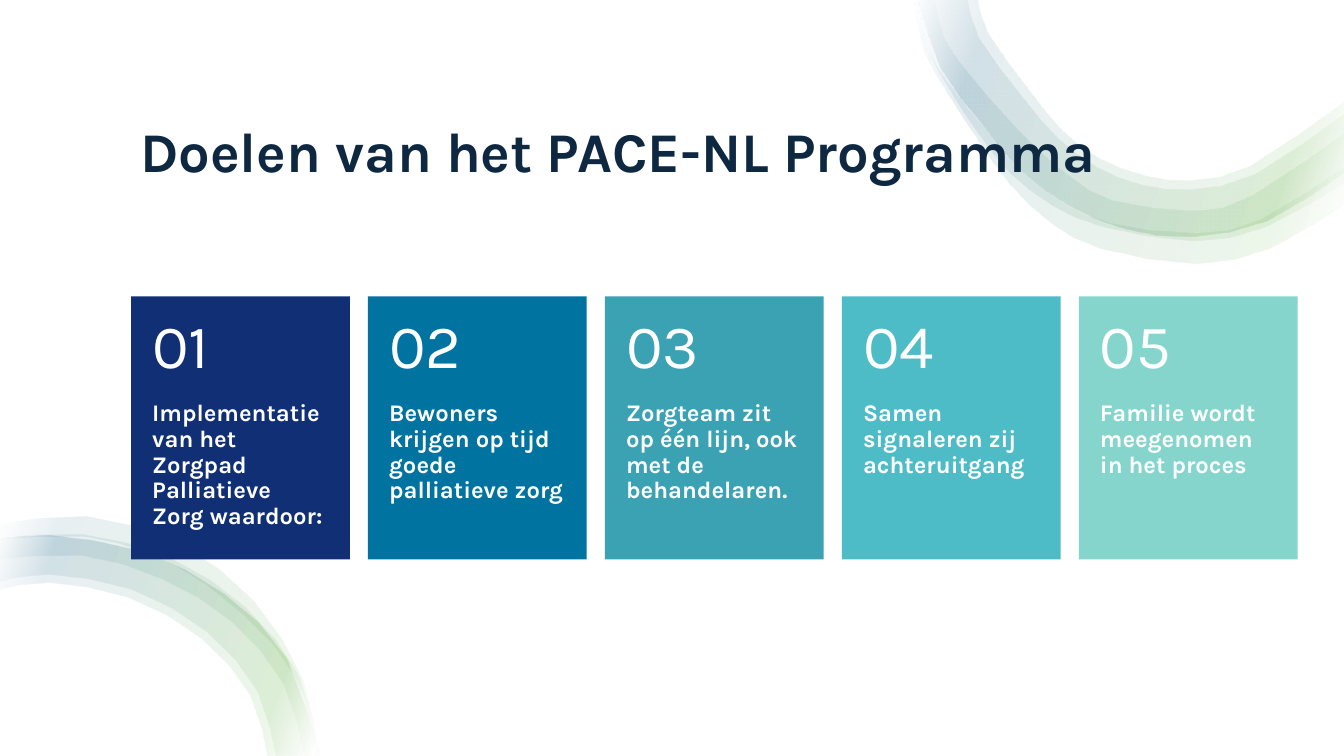
from lxml import etree
from pptx import Presentation
from pptx.dml.color import RGBColor
from pptx.enum.shapes import MSO_SHAPE
from pptx.enum.text import MSO_ANCHOR
from pptx.oxml import parse_xml
from pptx.util import Inches, Pt

RECT = MSO_SHAPE.RECTANGLE
TOP, MID, LOW = MSO_ANCHOR.TOP, MSO_ANCHOR.MIDDLE, MSO_ANCHOR.BOTTOM
NS = "http://schemas.openxmlformats.org/drawingml/2006/main"
WIDE, HIGH = 13.33, 7.5
LEFT, ROW, GAP = 1.3, 2.94, 0.18
CARD_W, CARD_H, HEAD_H = 2.17, 2.61, 1.04
FONT = "Karla"
STEPS = 2

COLORS = {
    "white": "FFFFFF", "ink": "0E2841", "green": "4EA72E", "blue": "156082",
    "navy": "102F75", "ocean": "0073A0", "teal": "3BA2B3",
    "aqua": "4DBCC6", "mint": "85D5CC",
}
FADE = [(2, "white"), (16, "green"), (85, "blue"), (100, "white")]

CARDS = [
    ("navy", "Implementatie van het Zorgpad Palliatieve Zorg waardoor:"),
    ("ocean", "Bewoners krijgen op tijd goede palliatieve zorg"),
    ("teal", "Zorgteam zit op één lijn, ook met de behandelaren."),
    ("aqua", "Samen signaleren zij achteruitgang"),
    ("mint", "Familie wordt meegenomen in het proces"),
]

TOP_RIM = [(9.11, 0), (9.33, 0.68), (9.73, 1.22), (10.13, 1.69),
           (10.6, 2.04), (11.15, 2.27), (11.81, 2.35), (12.57, 2.19),
           (13.33, 1.71)]
LOW_RIM = [(0, 5.36), (0.49, 5.31), (1.41, 5.47), (2.22, 5.89), (2.84, 6.53),
           (3.16, 7.5)]

TOP_BANDS = [
    ([(9.07, 0), (9.16, 0.5), (9.42, 0.96), (9.7, 1.39), (10.01, 1.82),
      (10.41, 2.2), (10.91, 2.46), (11.86, 2.61), (12.61, 2.45),
      (13.33, 2.02)],
     [(9.1, 0), (9.2, 0.49), (9.48, 0.92), (9.81, 1.32), (10.15, 1.7),
      (10.55, 2.01), (11.01, 2.21), (11.85, 2.31), (12.48, 2.18),
      (13.33, 1.65)]),
    ([(9.11, 0), (9.19, 0.46), (9.43, 0.91), (9.7, 1.32), (10.02, 1.72),
      (10.44, 2.04), (10.94, 2.25), (11.84, 2.39), (12.55, 2.25),
      (13.33, 1.81)],
     [(9.27, 0), (9.37, 0.39), (9.64, 0.77), (9.96, 1.14), (10.29, 1.48),
      (10.64, 1.77), (11.04, 1.99), (11.86, 2.09), (12.41, 1.94),
      (13.33, 1.32)]),
    (TOP_RIM,
     [(9.6, 0), (9.71, 0.38), (10.13, 0.95), (10.49, 1.37), (10.88, 1.66),
      (11.31, 1.83), (11.81, 1.88), (12.44, 1.73), (13.33, 1.13)]),
    (TOP_RIM,
     [(9.7, 0), (9.8, 0.33), (10.21, 0.9), (10.54, 1.3), (10.9, 1.57),
      (11.34, 1.74), (11.81, 1.79), (12.39, 1.65), (13.33, 1.01)]),
]
LOW_BANDS = [
    (LOW_RIM,
     [(0, 5.85), (0.49, 5.78), (1.28, 5.93), (1.99, 6.33), (2.48, 6.9),
      (2.65, 7.5)]),
    (LOW_RIM,
     [(0, 5.77), (0.49, 5.7), (1.31, 5.85), (2.05, 6.27), (2.55, 6.86),
      (2.73, 7.5)]),
    ([(0, 5.34), (0.83, 5.3), (1.7, 5.54), (2.44, 6.03), (2.97, 6.72),
      (3.16, 7.5)],
     [(0, 5.55), (0.81, 5.51), (1.6, 5.74), (2.3, 6.17), (2.81, 6.79),
      (3.02, 7.5)]),
    ([(0, 5.21), (0.86, 5.13), (1.78, 5.4), (2.52, 5.97), (3, 6.74),
      (3.17, 7.5)],
     [(0, 5.36), (0.83, 5.33), (1.47, 5.5), (2.05, 5.81), (2.7, 6.39),
      (3.03, 6.96), (3.14, 7.5)]),
]


def paint(name):
    return RGBColor.from_string(COLORS[name])


def add_text(shapes, text, box, size, color="white", bold=False,
             anchor=TOP, inset=(0.1, 0.05, 0.1, 0.05)):
    frame = shapes.add_textbox(*map(Inches, box)).text_frame
    frame.word_wrap = True
    frame.vertical_anchor = anchor
    (frame.margin_left, frame.margin_top,
     frame.margin_right, frame.margin_bottom) = map(Inches, inset)
    para = frame.paragraphs[0]
    para.line_spacing = 0.9
    run = para.add_run()
    run.text = text
    font = run.font
    font.name, font.size, font.bold = FONT, Pt(size), bold
    font.color.rgb = paint(color)


def add_rect(shapes, box, color):
    rect = shapes.add_shape(RECT, *map(Inches, box))
    rect.shadow.inherit = False
    rect.fill.solid()
    rect.fill.fore_color.rgb = paint(color)
    rect.line.fill.background()


def curve(knots):
    ends = [knots[0], *knots, knots[-1]]
    dots = [knots[0]]
    for a, b, c, d in zip(ends, ends[1:], ends[2:], ends[3:]):
        for step in range(1, STEPS + 1):
            t = step / STEPS
            dots.append(tuple(
                q + t * (r - p) / 2 + t * t * (2 * p - 5 * q + 4 * r - s) / 2
                + t ** 3 * (3 * q - p - 3 * r + s) / 2
                for p, q, r, s in zip(a, b, c, d)))
    return dots


def fade():
    grad = etree.Element(f"{{{NS}}}gradFill", rotWithShape="1", nsmap={"a": NS})
    stops = etree.SubElement(grad, f"{{{NS}}}gsLst")
    for place, name in FADE:
        stop = etree.SubElement(stops, f"{{{NS}}}gs", pos=str(place * 1000))
        tone = etree.SubElement(stop, f"{{{NS}}}srgbClr", val=COLORS[name])
        etree.SubElement(tone, f"{{{NS}}}alpha", val="10000")
    etree.SubElement(grad, f"{{{NS}}}lin", ang=str(200 * 60000), scaled="0")
    return parse_xml(etree.tostring(grad))


def add_band(shapes, outer, inner):
    dots = [(Inches(x), Inches(y)) for x, y in curve(outer) + curve(inner)[::-1]]
    pen = shapes.build_freeform(*dots[0])
    pen.add_line_segments(dots[1:], close=True)
    band = pen.convert_to_shape()
    band.shadow.inherit = False
    band.line.fill.background()
    band.fill.background()
    props = band._element.spPr
    props.replace(props.find(f"{{{NS}}}noFill"), fade())


def add_card(shapes, col, color, text):
    left = LEFT + col * (CARD_W + GAP)
    add_rect(shapes, (left, ROW, CARD_W, CARD_H), color)
    add_text(shapes, text, (left, ROW + HEAD_H, CARD_W, CARD_H - HEAD_H), 17,
             bold=True, inset=(0.21, 0, 0.21, 0.36))
    add_text(shapes, f"{col + 1:02}", (left, ROW, CARD_W, HEAD_H), 44,
             anchor=MID, inset=(0.21, 0.18, 0.21, 0.18))


def main():
    deck = Presentation()
    deck.slide_width, deck.slide_height = Inches(WIDE), Inches(HIGH)
    shapes = deck.slides.add_slide(deck.slide_layouts[6]).shapes
    add_rect(shapes, (0, 0, WIDE, HIGH), "white")
    for outer, inner in TOP_BANDS + LOW_BANDS:
        add_band(shapes, outer, inner)
    add_text(shapes, "Doelen van het PACE-NL Programma", (1.29, 0.43, 10.75, 1.45),
             40, color="ink", bold=True, anchor=LOW)
    for col, (color, text) in enumerate(CARDS):
        add_card(shapes, col, color, text)
    deck.save("out.pptx")


if __name__ == "__main__":
    main()
